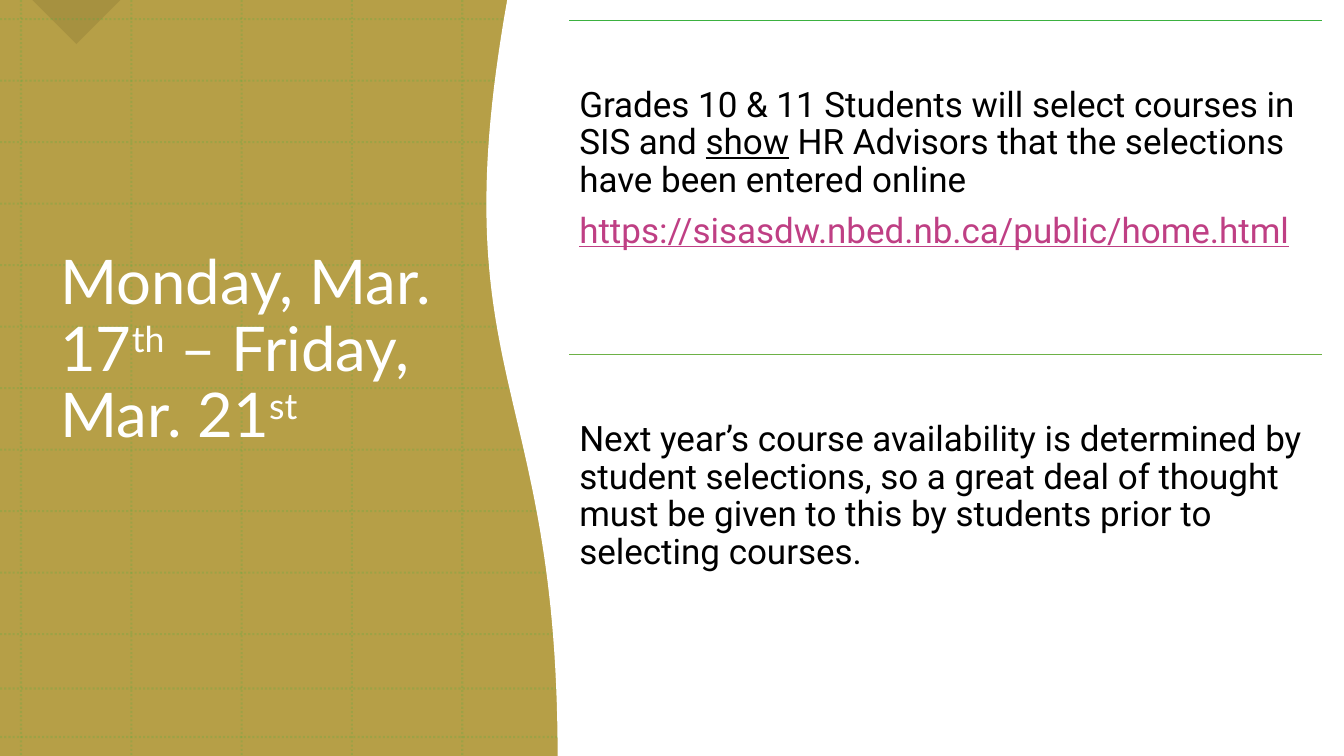
from lxml import etree
from pptx import Presentation
from pptx.dml.color import RGBColor
from pptx.enum.dml import MSO_LINE
from pptx.enum.shapes import MSO_CONNECTOR, MSO_SHAPE
from pptx.enum.text import MSO_ANCHOR
from pptx.oxml.ns import qn
from pptx.util import Cm, Pt

STRAIGHT = MSO_CONNECTOR.STRAIGHT
RECTANGLE = MSO_SHAPE.RECTANGLE
RIGHT_TRIANGLE = MSO_SHAPE.RIGHT_TRIANGLE
DOTTED = MSO_LINE.ROUND_DOT
TOP, MIDDLE = MSO_ANCHOR.TOP, MSO_ANCHOR.MIDDLE

SLIDE_WIDTH, SLIDE_HEIGHT = 33.87, 19.05
GOLD, SHADE, GREEN, LIME = "B69F47", "5B5023", "3BB140", "6DB146"
WHITE, BLACK, PINK = "FFFFFF", "000000", "BF3F84"


def colour(hex_code):
    """Turn a hex string into a colour."""
    return RGBColor.from_string(hex_code)


def set_alpha(fill, percent):
    """Make the solid colour below the given element partly transparent."""
    colour_element = next(fill.iter(qn("a:srgbClr")))
    etree.SubElement(colour_element, qn("a:alpha"), val=str(percent * 1000))


def paint(shape, hex_code, alpha=None):
    """Give a shape a plain fill without line or shadow."""
    shape.shadow.inherit = False
    shape.fill.solid()
    shape.fill.fore_color.rgb = colour(hex_code)
    shape.line.fill.background()
    if alpha is not None:
        set_alpha(shape.element.spPr.find(qn("a:solidFill")), alpha)


def add_rule(slide, start, end, hex_code, weight=1, dash=None, alpha=None):
    """Draw a straight line between two points."""
    rule = slide.shapes.add_connector(
        STRAIGHT, Cm(start[0]), Cm(start[1]), Cm(end[0]), Cm(end[1]))
    rule.line.color.rgb = colour(hex_code)
    rule.line.width = Pt(weight)
    if dash is not None:
        rule.line.dash_style = dash
    properties = rule.element.spPr
    if alpha is not None:
        set_alpha(properties, alpha)
    etree.SubElement(properties, qn("a:effectLst"))


def add_text(slide, box, paragraphs, font, size, hex_code, anchor=TOP,
             top_margin=0.25, bottom_margin=0.25, space_after=0):
    """Write paragraphs of (text, format) runs into a box."""
    left, top, width, height = box
    frame = slide.shapes.add_textbox(
        Cm(left), Cm(top), Cm(width), Cm(height)).text_frame
    frame.word_wrap = True
    frame.vertical_anchor = anchor
    frame.margin_left = frame.margin_right = Cm(0.25)
    frame.margin_top, frame.margin_bottom = Cm(top_margin), Cm(bottom_margin)
    for index, runs in enumerate(paragraphs):
        paragraph = frame.add_paragraph() if index else frame.paragraphs[0]
        paragraph.line_spacing = 0.9
        paragraph.space_after = Pt(space_after)
        for text, style in runs:
            run = paragraph.add_run()
            run.text = text
            run.font.name = font
            run.font.size = Pt(size)
            run.font.color.rgb = colour(style.get("color", hex_code))
            if style.get("underline"):
                run.font.underline = True
            if style.get("superscript"):
                run.font._element.set("baseline", "30000")


def add_backdrop(slide, box):
    """Draw the gold ground with its corner mark and dotted grid."""
    left, top, width, height = box
    ground = slide.shapes.add_shape(
        RECTANGLE, Cm(left), Cm(top), Cm(width), Cm(height))
    paint(ground, GOLD)
    side = 1.57
    corner_mark = slide.shapes.add_shape(
        RIGHT_TRIANGLE, Cm(left + 1.14), Cm(top - side / 2), Cm(side), Cm(side))
    corner_mark.rotation = 315
    paint(corner_mark, SHADE, alpha=17)

    columns = [left + 0.53 + 2.78 * step for step in range(5)]
    rows = [top + 0.48 + 1.55 * step for step in range(11)]
    rows += [top + 17.35, top + 18.57]
    grid = [((x, top), (x, top + height)) for x in columns]
    grid += [((left, y), (left + width, y)) for y in rows]
    for start, end in grid:
        add_rule(slide, start, end, GREEN, weight=1.5, dash=DOTTED, alpha=20)


def add_wave_panel(slide, box):
    """Draw the white panel whose left edge is a cubic curve."""
    left, top, width, height = box
    controls = [(1.27, 1), (1.27, 0.5), (-1.7, 0.5), (0, 0)]
    steps = 60
    edge = []
    for step in range(steps + 1):
        t = step / steps
        weights = ((1 - t) ** 3, 3 * t * (1 - t) ** 2, 3 * t * t * (1 - t), t ** 3)
        x = sum(w * point[0] for w, point in zip(weights, controls))
        y = sum(w * point[1] for w, point in zip(weights, controls))
        edge.append((Cm(left + x), Cm(top + y * height)))
    right, bottom = Cm(left + width), Cm(top + height)
    outline = slide.shapes.build_freeform(right, Cm(top))
    outline.add_line_segments([(right, bottom)] + edge, close=True)
    panel = outline.convert_to_shape()
    paint(panel, WHITE)
    panel.line.color.rgb = colour(WHITE)
    panel.line.width = Pt(1)


def add_dates(slide, box):
    """Write the week of the course selection."""
    raised = {"superscript": True}
    runs = [("Monday, Mar. 17", {}), ("th", raised),
            (" – Friday, Mar. 21", {}), ("st", raised)]
    add_text(slide, box, [runs], "Lato", 44, WHITE, anchor=MIDDLE,
             top_margin=0.13, bottom_margin=1.8)


def add_notice(slide, box, paragraphs, rule_colour):
    """Write one notice under its coloured rule."""
    left, top, width, _ = box
    add_rule(slide, (left, top), (left + width, top), rule_colour)
    add_text(slide, box, paragraphs, "Roboto", 25, BLACK,
             top_margin=1.68, space_after=9)


def main():
    """Build the slide and save it."""
    presentation = Presentation()
    presentation.slide_width = Cm(SLIDE_WIDTH)
    presentation.slide_height = Cm(SLIDE_HEIGHT)
    slide = presentation.slides.add_slide(presentation.slide_layouts[6])

    add_backdrop(slide, (0, 0, SLIDE_WIDTH, SLIDE_HEIGHT))
    wave_left = 12.8
    add_wave_panel(slide, (wave_left, 0, SLIDE_WIDTH - wave_left, SLIDE_HEIGHT))
    add_dates(slide, (1.27, 2, 10.36, 15.37))

    selection = [
        [("Grades 10 & 11 Students will select courses in SIS and ", {}),
         ("show", {"underline": True}),
         (" HR Advisors that the selections have been entered online", {})],
        [("https://sisasdw.nbed.nb.ca/public/home.html",
          {"color": PINK, "underline": True})],
    ]
    availability = [
        [("Next year’s course availability is determined by student selections, "
          "so a great deal of thought must be given to this by students prior to "
          "selecting courses.", {})],
    ]
    notices = [(selection, GREEN), (availability, LIME)]
    notice_height = 8.42
    for index, (paragraphs, rule_colour) in enumerate(notices):
        box = (14.35, 0.51 + index * notice_height, 18.97, notice_height)
        add_notice(slide, box, paragraphs, rule_colour)

    presentation.save("out.pptx")


if __name__ == "__main__":
    main()
